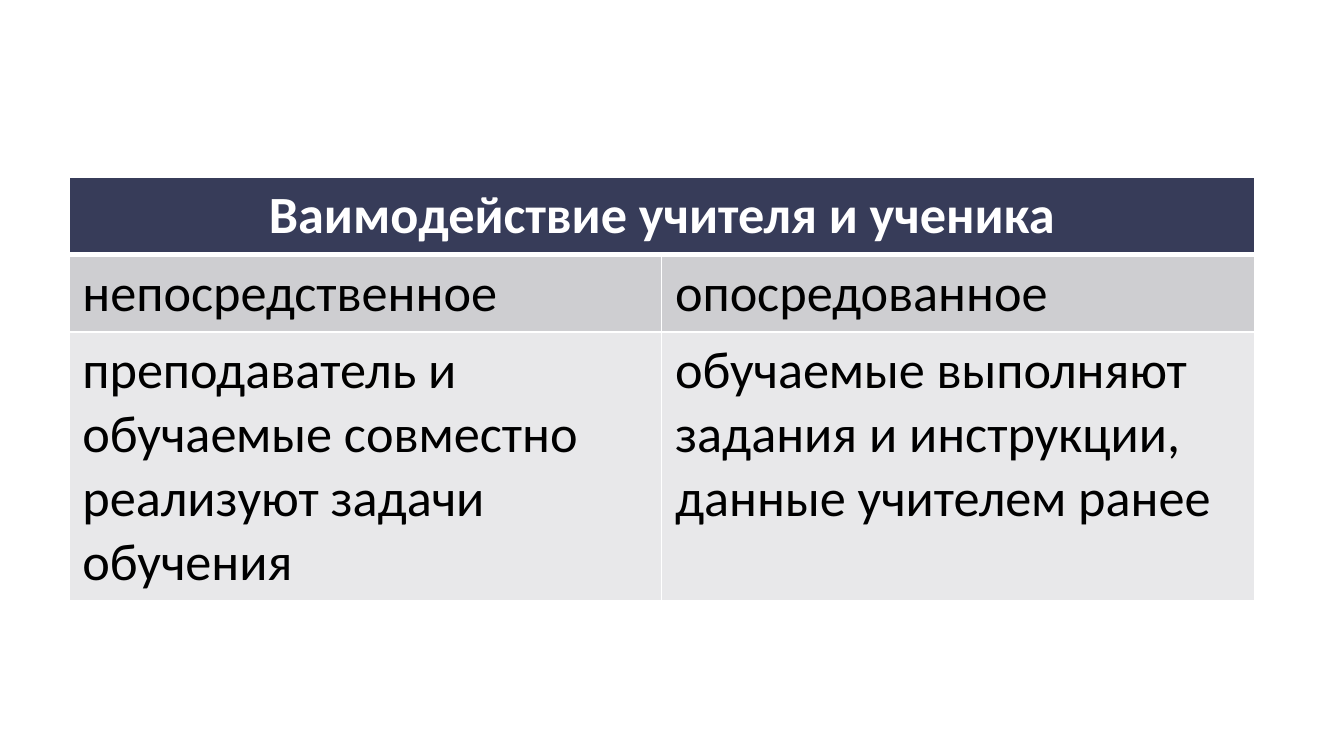
from dataclasses import dataclass

from lxml.etree import SubElement
from pptx import Presentation
from pptx.dml.color import RGBColor
from pptx.enum.text import PP_ALIGN as Align
from pptx.oxml.ns import qn
from pptx.table import Table, _Cell as Cell
from pptx.util import Pt

COLUMN_WIDTH = 317.5
FONT = "Calibri"
WHITE = "FFFFFF"


@dataclass
class Row:
    texts: list[str]
    fill: str
    height: float
    color: str = "000000"
    bold: bool = False
    align: Align = Align.LEFT
    top_line: float = 1
    bottom_line: float = 1


ROWS = [
    Row(["Ваимодействие учителя и ученика"], "373C59", 41.4,
        color=WHITE, bold=True, align=Align.CENTER, bottom_line=3),
    Row(["непосредственное", "опосредованное"], "CECED1", 41.4, top_line=3),
    Row(["преподаватель и обучаемые совместно реализуют задачи обучения",
         "обучаемые выполняют задания и инструкции, данные учителем ранее"],
        "E8E8EA", 144),
]


def rgb(value: str) -> RGBColor:
    return RGBColor.from_string(value)


def write_text(cell: Cell, text: str, *, color: str, bold: bool,
               align: Align, size: float = 28) -> None:
    paragraph = cell.text_frame.paragraphs[0]
    paragraph.alignment = align
    run = paragraph.add_run()
    run.text = text
    font = run.font
    font.name, font.size, font.bold = FONT, Pt(size), bold
    font.color.rgb = rgb(color)


def add_borders(cell: Cell, top: float, bottom: float) -> None:
    """Draw white cell borders; call before setting the fill, as the schema orders them."""
    properties = cell._tc.get_or_add_tcPr()
    for side, width in (("L", 1), ("R", 1), ("T", top), ("B", bottom)):
        line = SubElement(properties, qn(f"a:ln{side}"), w=str(Pt(width)))
        fill = SubElement(line, qn("a:solidFill"))
        SubElement(fill, qn("a:srgbClr"), val=WHITE)


def fill_row(table: Table, index: int, row: Row) -> None:
    table.rows[index].height = Pt(row.height)
    for cell in table.rows[index].cells:
        add_borders(cell, row.top_line, row.bottom_line)
        cell.fill.solid()
        cell.fill.fore_color.rgb = rgb(row.fill)
    for column, text in enumerate(row.texts):
        write_text(table.cell(index, column), text, color=row.color,
                   bold=row.bold, align=row.align)


def main() -> None:
    presentation = Presentation()
    presentation.slide_width, presentation.slide_height = Pt(720), Pt(405)
    slide = presentation.slides.add_slide(presentation.slide_layouts[6])

    height = sum(row.height for row in ROWS)
    table = slide.shapes.add_table(len(ROWS), 2, Pt(37), Pt(95),
                                   Pt(2 * COLUMN_WIDTH), Pt(height)).table
    table.cell(0, 0).merge(table.cell(0, 1))
    for index, row in enumerate(ROWS):
        fill_row(table, index, row)

    presentation.save("out.pptx")


if __name__ == "__main__":
    main()
